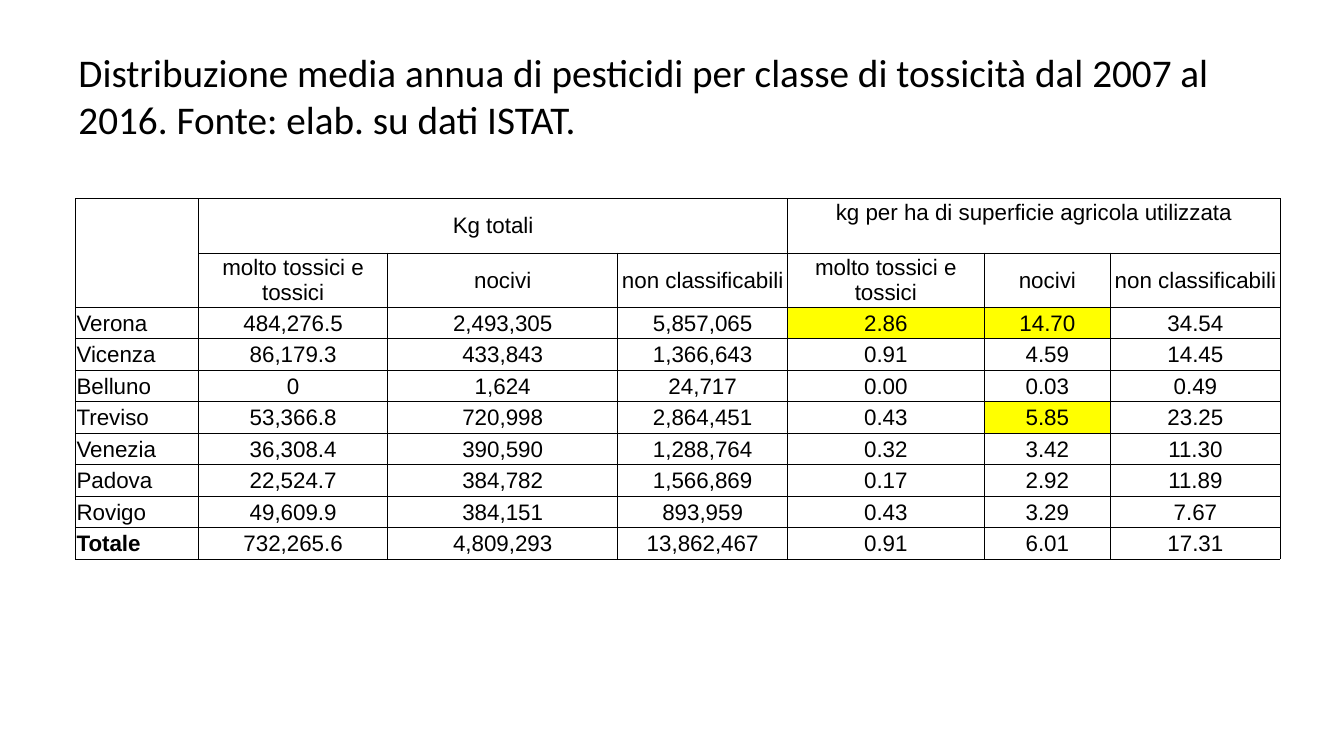
import lxml.etree
import pptx
import pptx.dml.color
import pptx.enum.text
import pptx.oxml.ns
import pptx.util

Pt = pptx.util.Pt
qn = pptx.oxml.ns.qn
ALIGN = pptx.enum.text.PP_ALIGN
ANCHOR = pptx.enum.text.MSO_ANCHOR

BLACK = pptx.dml.color.RGBColor(0x00, 0x00, 0x00)
YELLOW = pptx.dml.color.RGBColor(0xFF, 0xFF, 0x00)

TITLE = ("Distribuzione media annua di pesticidi per classe di tossicità "
         "dal 2007 al 2016. Fonte: elab. su dati ISTAT.")
TOXICITY_CLASSES = ["molto tossici e tossici", "nocivi", "non classificabili"]
ROWS = [
    ["", "Kg totali", "", "", "kg per ha di superficie agricola utilizzata", "", ""],
    [""] + TOXICITY_CLASSES * 2,
    ["Verona", "484,276.5", "2,493,305", "5,857,065", "2.86", "14.70", "34.54"],
    ["Vicenza", "86,179.3", "433,843", "1,366,643", "0.91", "4.59", "14.45"],
    ["Belluno", "0", "1,624", "24,717", "0.00", "0.03", "0.49"],
    ["Treviso", "53,366.8", "720,998", "2,864,451", "0.43", "5.85", "23.25"],
    ["Venezia", "36,308.4", "390,590", "1,288,764", "0.32", "3.42", "11.30"],
    ["Padova", "22,524.7", "384,782", "1,566,869", "0.17", "2.92", "11.89"],
    ["Rovigo", "49,609.9", "384,151", "893,959", "0.43", "3.29", "7.67"],
    ["Totale", "732,265.6", "4,809,293", "13,862,467", "0.91", "6.01", "17.31"],
]
HEADER_ROWS = 2
HEADER_HEIGHT = 38.9
BODY_HEIGHT = 22.5
COLUMN_WIDTHS = [87.8, 135.2, 164.2, 121.5, 140.2, 90.6, 120.9]
HIGHLIGHTED = {(2, 4), (2, 5), (5, 5)}
# The empty corner spans two cells with no line between them.
OPEN_EDGES = {(0, 0): "B", (1, 0): "T"}


def add_title(slide):
    box = slide.shapes.add_textbox(Pt(49), Pt(31), Pt(839), Pt(75))
    box.text_frame.word_wrap = True
    paragraph = box.text_frame.paragraphs[0]
    paragraph.text = TITLE
    style_font(paragraph, "Calibri", 28)


def style_font(paragraph, name, size, bold=False):
    paragraph.font.name = name
    paragraph.font.size = Pt(size)
    paragraph.font.bold = bold
    paragraph.font.color.rgb = BLACK


def set_borders(cell, open_edges):
    """Draw thin black lines on every side but those in open_edges (L, R, T, B)."""
    properties = cell._tc.get_or_add_tcPr()
    for edge in "LRTB":
        line = lxml.etree.SubElement(properties, qn("a:ln" + edge), w=str(Pt(0.5)))
        if edge in open_edges:
            lxml.etree.SubElement(line, qn("a:noFill"))
        else:
            fill = lxml.etree.SubElement(line, qn("a:solidFill"))
            lxml.etree.SubElement(fill, qn("a:srgbClr"), val=str(BLACK))


def fill_cell(cell, text, row, column):
    cell.margin_left = cell.margin_right = cell.margin_top = Pt(0.7)
    cell.margin_bottom = Pt(0)
    cell.vertical_anchor = ANCHOR.MIDDLE
    set_borders(cell, OPEN_EDGES.get((row, column), ""))
    if (row, column) in HIGHLIGHTED:
        cell.fill.solid()
        cell.fill.fore_color.rgb = YELLOW
    else:
        cell.fill.background()
    paragraph = cell.text_frame.paragraphs[0]
    paragraph.text = text
    paragraph.alignment = ALIGN.LEFT if column == 0 else ALIGN.CENTER
    style_font(paragraph, "Arial", 16, bold=text == "Totale")


def add_pesticide_table(slide):
    heights = [HEADER_HEIGHT if row < HEADER_ROWS else BODY_HEIGHT
               for row in range(len(ROWS))]
    table = slide.shapes.add_table(
        len(ROWS), len(COLUMN_WIDTHS), Pt(54), Pt(141.7),
        Pt(sum(COLUMN_WIDTHS)), Pt(sum(heights))).table
    table.first_row = False
    table.horz_banding = False
    for column, width in zip(table.columns, COLUMN_WIDTHS):
        column.width = Pt(width)
    for row, height in zip(table.rows, heights):
        row.height = Pt(height)
    for row, texts in enumerate(ROWS):
        for column, text in enumerate(texts):
            fill_cell(table.cell(row, column), text, row, column)
    for first in (1, 4):
        table.cell(0, first).merge(table.cell(0, first + 2))
    per_hectare = table.cell(0, 4)
    per_hectare.vertical_anchor = ANCHOR.TOP
    per_hectare.margin_top = Pt(1.5)


def main():
    presentation = pptx.Presentation()
    presentation.slide_width = Pt(960)
    presentation.slide_height = Pt(540)
    slide = presentation.slides.add_slide(presentation.slide_layouts[6])
    add_pesticide_table(slide)
    add_title(slide)
    presentation.save("out.pptx")


if __name__ == "__main__":
    main()
